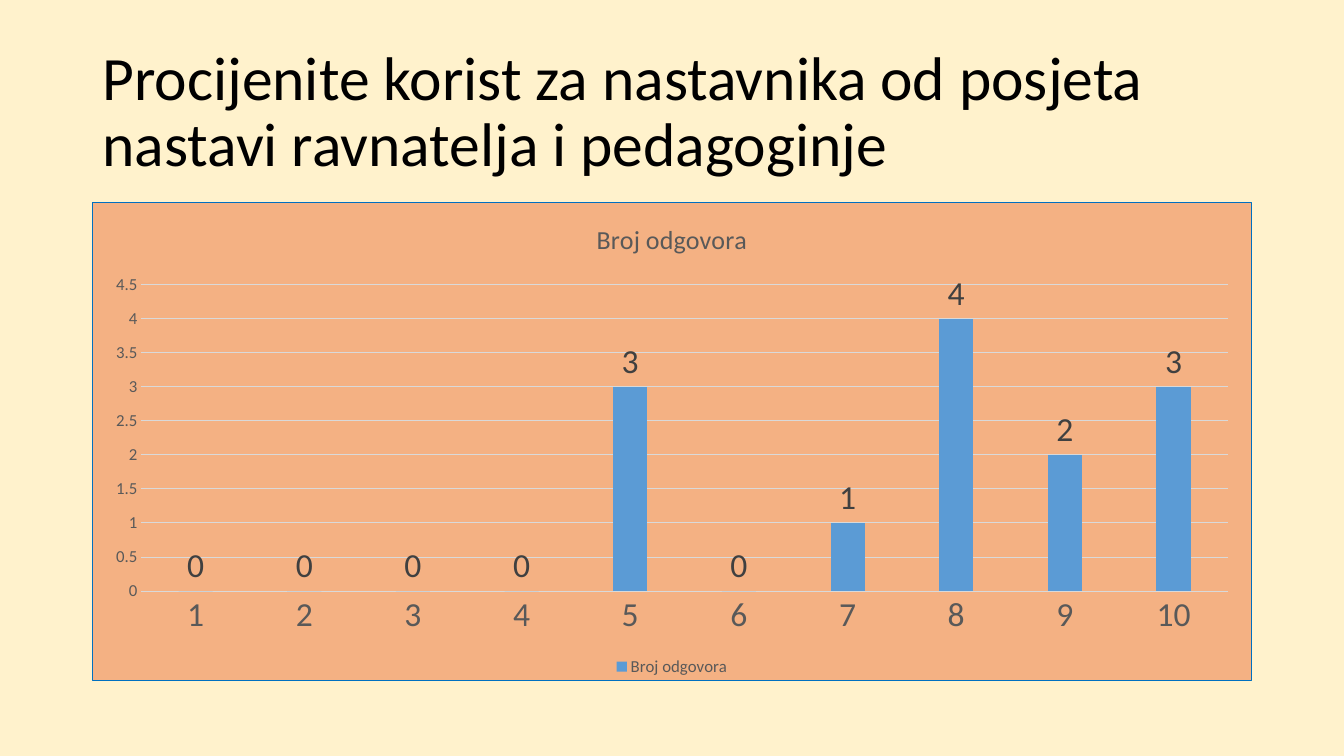
import lxml.etree
import pptx
import pptx.chart.data
import pptx.dml.color
import pptx.enum.chart
import pptx.enum.text
import pptx.oxml
import pptx.oxml.ns
import pptx.util

Pt = pptx.util.Pt
FONT = "Calibri"
GREY = "595959"
PALE_GREY = "D9D9D9"
LEFT, WIDTH = 66, 828
ANSWERS = [0, 0, 0, 0, 3, 0, 1, 4, 2, 3]


def colour(hex_string):
    return pptx.dml.color.RGBColor.from_string(hex_string)


def style_font(font, size, hex_string):
    font.name = FONT
    font.size = Pt(size)
    font.bold = False
    font.color.rgb = colour(hex_string)


def style_line(line, hex_string):
    line.color.rgb = colour(hex_string)
    line.width = Pt(0.75)


def place_title(page, text):
    title = page.shapes.title
    title.left, title.top = Pt(LEFT), Pt(28.8)
    title.width, title.height = Pt(WIDTH), Pt(104.4)
    frame = title.text_frame
    frame.text = text
    frame.word_wrap = True
    frame.auto_size = pptx.enum.text.MSO_AUTO_SIZE.NONE
    frame.vertical_anchor = pptx.enum.text.MSO_ANCHOR.MIDDLE
    para = frame.paragraphs[0]
    para.alignment = pptx.enum.text.PP_ALIGN.LEFT
    para.line_spacing = 0.9
    style_font(para.font, 44, "000000")


def fill_chart_area(chart, fill, border):
    """Give the whole chart a background and a thin border."""
    area = pptx.oxml.parse_xml(
        f'<c:spPr {pptx.oxml.ns.nsdecls("c", "a")}>'
        f'<a:solidFill><a:srgbClr val="{fill}"/></a:solidFill>'
        f'<a:ln w="{Pt(0.75)}"><a:solidFill><a:srgbClr val="{border}"/></a:solidFill></a:ln>'
        "</c:spPr>"
    )
    chart.element.find(pptx.oxml.ns.qn("c:chart")).addnext(area)


def style_axes(chart):
    for axis, size in ((chart.category_axis, 24), (chart.value_axis, 12)):
        axis.major_tick_mark = pptx.enum.chart.XL_TICK_MARK.NONE
        axis.minor_tick_mark = pptx.enum.chart.XL_TICK_MARK.NONE
        style_font(axis.tick_labels.font, size, GREY)
    style_line(chart.category_axis.format.line, PALE_GREY)
    chart.value_axis.format.line.fill.background()
    style_line(chart.value_axis.major_gridlines.format.line, PALE_GREY)


def style_columns(plot):
    plot.gap_width = 219
    plot.overlap = -27
    plot.vary_by_categories = False
    series = plot.series[0]
    series.format.fill.solid()
    series.format.fill.fore_color.rgb = colour("5B9BD5")
    labels = series.data_labels
    labels.show_value = True
    labels.position = pptx.enum.chart.XL_LABEL_POSITION.OUTSIDE_END
    style_font(labels.font, 24, "404040")


def add_answer_chart(page, name, answers):
    data = pptx.chart.data.CategoryChartData()
    data.categories = [str(grade) for grade in range(1, len(answers) + 1)]
    data.add_series(name, answers)
    chart = page.shapes.add_chart(
        pptx.enum.chart.XL_CHART_TYPE.COLUMN_CLUSTERED,
        Pt(LEFT), Pt(144), Pt(WIDTH), Pt(342.6), data,
    ).chart
    style_font(chart.font, 10, "000000")
    fill_chart_area(chart, "F4B183", "0070C0")

    chart.has_title = True
    chart.chart_title.include_in_layout = False
    heading = chart.chart_title.text_frame
    heading.text = name
    style_font(heading.paragraphs[0].font, 18.6, GREY)

    chart.has_legend = True
    chart.legend.position = pptx.enum.chart.XL_LEGEND_POSITION.BOTTOM
    chart.legend.include_in_layout = False
    style_font(chart.legend.font, 12, GREY)

    style_axes(chart)
    style_columns(chart.plots[0])


def main():
    deck = pptx.Presentation()
    deck.slide_width, deck.slide_height = Pt(960), Pt(540)
    page = deck.slides.add_slide(deck.slide_layouts.get_by_name("Title Only"))
    page.background.fill.solid()
    page.background.fill.fore_color.rgb = colour("FFF2CC")
    place_title(page, "Procijenite korist za nastavnika od posjeta nastavi ravnatelja i pedagoginje")
    add_answer_chart(page, "Broj odgovora", ANSWERS)
    deck.save("out.pptx")


if __name__ == "__main__":
    main()
